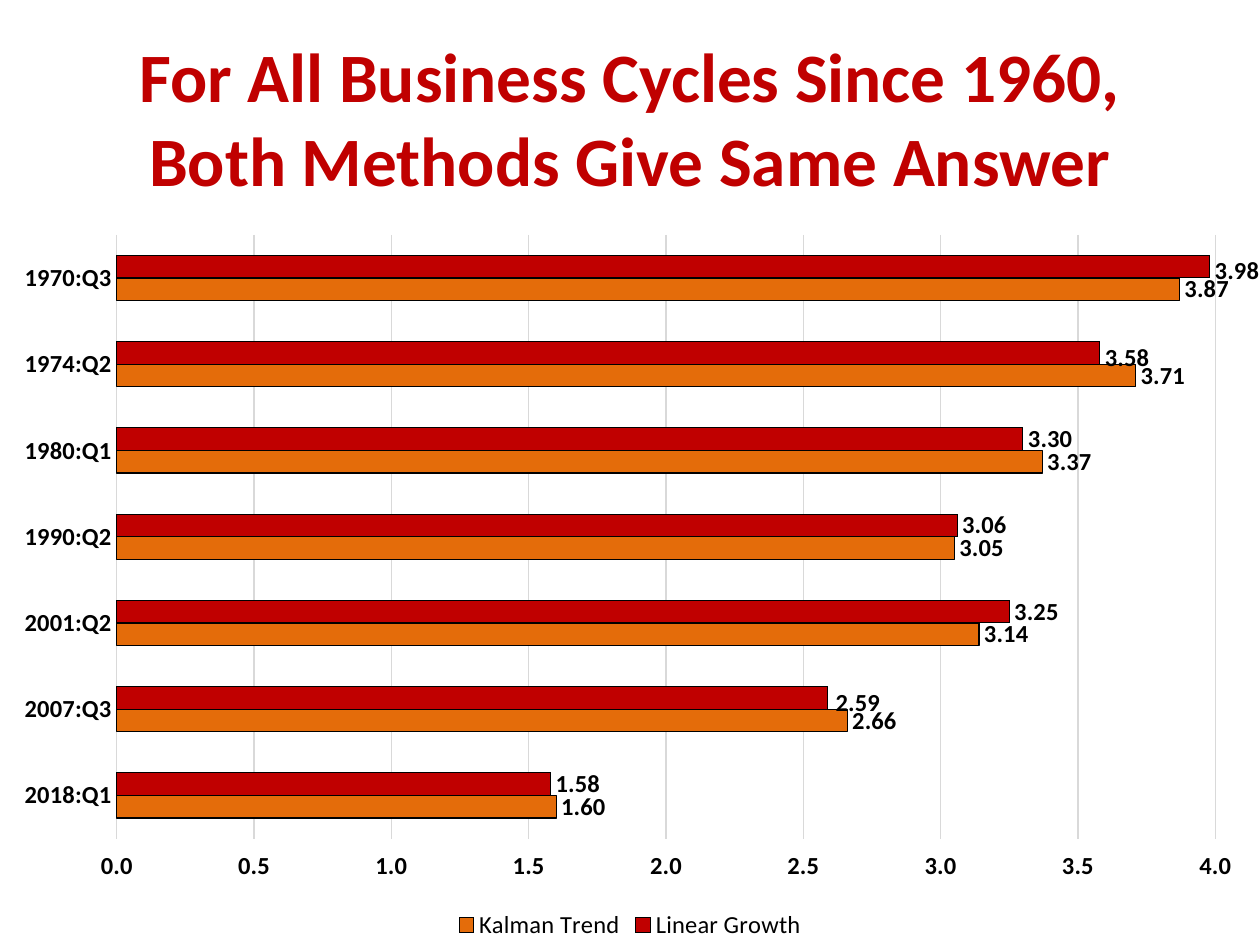
from dataclasses import dataclass, field

import pptx
import pptx.chart.data
import pptx.dml.color
import pptx.enum.chart
import pptx.enum.text
import pptx.oxml
import pptx.oxml.ns
import pptx.util

PX = 9525  # EMU per px, 96 px to the inch
FONT = "Calibri"
RED = pptx.dml.color.RGBColor(0xC0, 0x00, 0x00)
ORANGE = pptx.dml.color.RGBColor(0xE4, 0x6C, 0x0A)
BLACK = pptx.dml.color.RGBColor(0x00, 0x00, 0x00)
GRAY = pptx.dml.color.RGBColor(0xD9, 0xD9, 0xD9)

CHART_W, CHART_H = 960, 552
PLOT = (89, 11, 837, 460)  # left, top, width, height inside the chart
QUARTERS = ["1970:Q3", "1974:Q2", "1980:Q1", "1990:Q2", "2001:Q2", "2007:Q3", "2018:Q1"]


@dataclass
class Method:
    name: str
    values: list[float]
    color: pptx.dml.color.RGBColor
    line_pt: float
    label_shifts: dict[int, tuple[int, int]] = field(default_factory=dict)


METHODS = [
    Method("Linear Growth", [3.98, 3.58, 3.30, 3.06, 3.25, 2.59, 1.58], RED, 0,
           {0: (0, 3), 1: (0, 4), 5: (2, 4)}),
    Method("Kalman Trend", [3.87, 3.71, 3.37, 3.05, 3.14, 2.66, 1.60], ORANGE, 0.75),
]


def px(n: int) -> int:
    return pptx.util.Emu(n * PX)


def set_font(font, size: float, color, bold: bool) -> None:
    font.name = FONT
    font.size = pptx.util.Pt(size)
    font.bold = bold
    font.color.rgb = color


def set_line(line, color, width: float) -> None:
    line.color.rgb = color
    line.width = pptx.util.Pt(width)


def manual_layout(**settings):
    """Return a c:layout element holding the given settings in order."""
    items = "".join(f'<c:{tag} val="{val}"/>' for tag, val in settings.items())
    return pptx.oxml.parse_xml(
        f'<c:layout {pptx.oxml.ns.nsdecls("c")}><c:manualLayout>{items}'
        "</c:manualLayout></c:layout>")


def add_title(slide) -> None:
    tf = slide.shapes.add_textbox(px(48), px(29), px(864), px(120)).text_frame
    tf.word_wrap = True
    tf.vertical_anchor = pptx.enum.text.MSO_ANCHOR.MIDDLE
    p = tf.paragraphs[0]
    p.text = "For All Business Cycles Since 1960, Both Methods Give Same Answer"
    p.alignment = pptx.enum.text.PP_ALIGN.CENTER
    set_font(p.font, 39.6, RED, True)


def style_labels(labels) -> None:
    labels.show_value = True
    labels.number_format = "0.00"
    labels.number_format_is_linked = False
    labels.position = pptx.enum.chart.XL_LABEL_POSITION.OUTSIDE_END
    set_font(labels.font, 14, BLACK, True)


def style_series(series, method: Method) -> None:
    series.format.fill.solid()
    series.format.fill.fore_color.rgb = method.color
    set_line(series.format.line, BLACK, method.line_pt)
    style_labels(series.data_labels)
    for i, (dx, dy) in method.label_shifts.items():
        label = series.points[i].data_label
        set_font(label.font, 14, BLACK, True)
        label.position = pptx.enum.chart.XL_LABEL_POSITION.OUTSIDE_END
        idx = series._element.xpath(f'c:dLbls/c:dLbl/c:idx[@val="{i}"]')[0]
        number_format = pptx.oxml.parse_xml(
            f'<c:numFmt {pptx.oxml.ns.nsdecls("c")} formatCode="0.00" sourceLinked="0"/>')
        idx.addnext(number_format)
        idx.addnext(manual_layout(x=round(dx / CHART_W, 4), y=round(dy / CHART_H, 4)))


def style_axes(chart) -> None:
    quarters, growth = chart.category_axis, chart.value_axis
    for axis in (quarters, growth):
        axis.major_tick_mark = pptx.enum.chart.XL_TICK_MARK.NONE
        axis.minor_tick_mark = pptx.enum.chart.XL_TICK_MARK.NONE
        set_font(axis.tick_labels.font, 14, BLACK, True)
    quarters.reverse_order = True
    set_line(quarters.format.line, GRAY, 0.75)
    growth.minimum_scale, growth.maximum_scale, growth.major_unit = 0, 4, 0.5
    # The reversed categories put the high side at the bottom.
    growth.tick_label_position = pptx.enum.chart.XL_TICK_LABEL_POSITION.HIGH
    growth.tick_labels.number_format = "#,##0.0"
    growth.tick_labels.number_format_is_linked = False
    growth.format.line.fill.background()
    set_line(growth.major_gridlines.format.line, GRAY, 0.75)


def add_growth_chart(slide) -> None:
    data = pptx.chart.data.CategoryChartData(number_format="0.00")
    data.categories = QUARTERS
    for method in METHODS:
        data.add_series(method.name, method.values)
    chart = slide.shapes.add_chart(
        pptx.enum.chart.XL_CHART_TYPE.BAR_CLUSTERED,
        px(0), px(168), px(CHART_W), px(CHART_H), data).chart
    chart.has_title = False
    set_font(chart.font, 14, BLACK, False)
    chart.has_legend = True
    chart.legend.position = pptx.enum.chart.XL_LEGEND_POSITION.BOTTOM
    chart.legend.include_in_layout = False
    set_font(chart.legend.font, 14, BLACK, False)

    plot = chart.plots[0]
    plot.gap_width = 182
    plot.overlap = 0
    plot.vary_by_categories = False
    for series, method in zip(plot.series, METHODS):
        style_series(series, method)
    style_axes(chart)

    left, top, width, height = PLOT
    area = chart._chartSpace.chart.plotArea
    for old in area.xpath("c:layout"):
        area.remove(old)
    area.insert(0, manual_layout(
        layoutTarget="inner", xMode="edge", yMode="edge",
        x=round(left / CHART_W, 4), y=round(top / CHART_H, 4),
        w=round(width / CHART_W, 4), h=round(height / CHART_H, 4)))


def main() -> None:
    prs = pptx.Presentation()
    prs.slide_width, prs.slide_height = px(960), px(720)
    slide = prs.slides.add_slide(prs.slide_layouts[6])
    add_title(slide)
    add_growth_chart(slide)
    prs.save("out.pptx")


if __name__ == "__main__":
    main()
